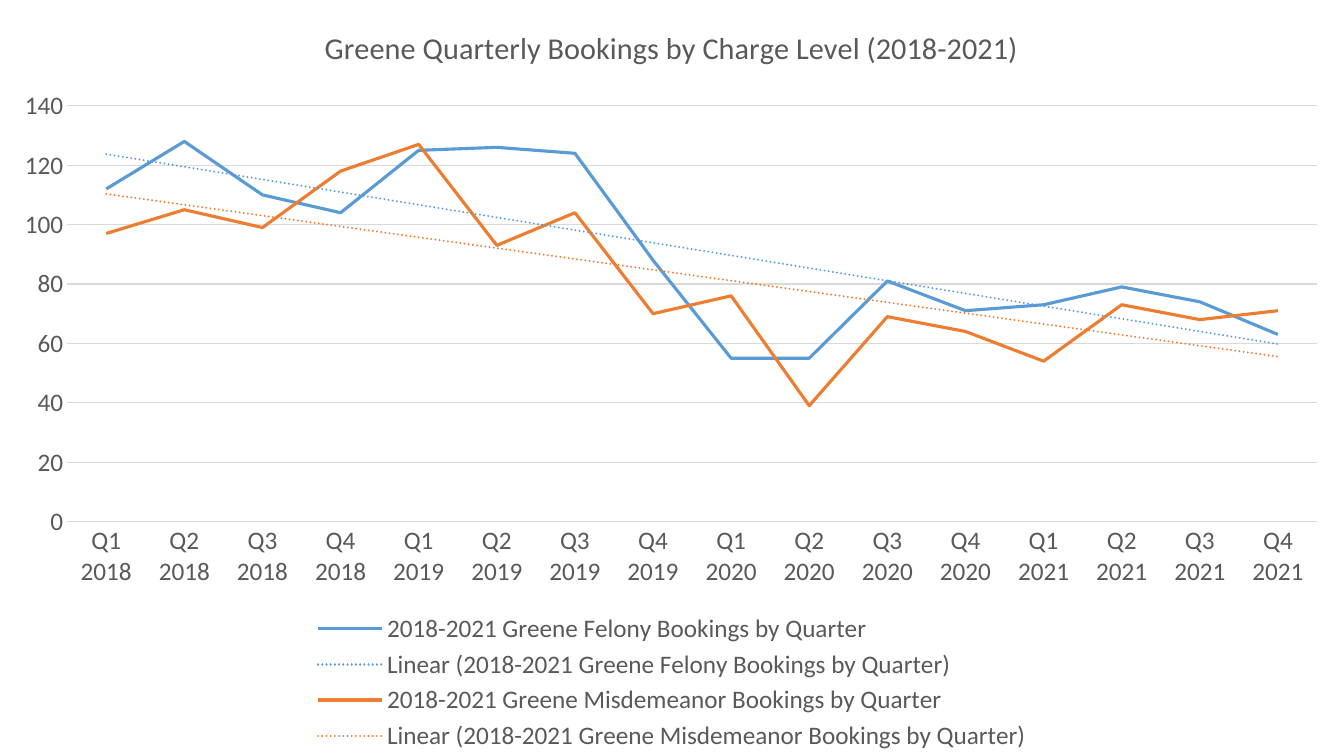
from lxml import etree
from pptx import Presentation
from pptx.chart.data import CategoryChartData
from pptx.dml.color import RGBColor
from pptx.enum.chart import XL_CHART_TYPE as ChartType, XL_LEGEND_POSITION as LegendPos, XL_TICK_MARK as Tick
from pptx.oxml import parse_xml
from pptx.oxml.ns import nsdecls, qn
from pptx.util import Cm, Pt

COLOURS = {"text": "595959", "grid": "D9D9D9", "felony": "5B9BD5", "misdemeanor": "ED7D31"}
TITLE = "Greene Quarterly Bookings by Charge Level (2018-2021)"
QUARTERS = [f"Q{quarter} {year}" for year in range(2018, 2022) for quarter in range(1, 5)]
BOOKINGS = {
    "felony": (112, 128, 110, 104, 125, 126, 124, 88, 55, 55, 81, 71, 73, 79, 74, 63),
    "misdemeanor": (97, 105, 99, 118, 127, 93, 104, 70, 76, 39, 69, 64, 54, 73, 68, 71),
}
PLOT_AREA = {"x": 0.05, "y": 0.14, "w": 0.93, "h": 0.55}
WIDTH, HEIGHT = Cm(33.87), Cm(19.05)


def apply(target, **values):
    """Set each given attribute on the target."""
    for attribute, value in values.items():
        setattr(target, attribute, value)


def style_font(font, size):
    """Give a font the chart's typeface and text colour."""
    apply(font, name="Calibri", size=Pt(size), bold=False)
    font.color.rgb = RGBColor.from_string(COLOURS["text"])


def style_line(line, colour, width):
    """Give a line its colour and its width in points."""
    line.color.rgb = RGBColor.from_string(COLOURS[colour])
    line.width = Pt(width)


def add_trend(series, colour):
    """Add a dotted linear trend line to a series."""
    trend = parse_xml(
        f'<c:trendline {nsdecls("c", "a")}><c:spPr><a:ln w="{Pt(1.5)}" cap="rnd"><a:solidFill>'
        f'<a:srgbClr val="{COLOURS[colour]}"/></a:solidFill><a:prstDash val="sysDot"/></a:ln></c:spPr>'
        '<c:trendlineType val="linear"/><c:dispRSqr val="0"/><c:dispEq val="0"/></c:trendline>')
    series._element.find(qn("c:cat")).addprevious(trend)


def place_plot(chart):
    """Fix the inner plot area as fractions of the chart."""
    plot_area = chart._chartSpace.chart.plotArea
    for automatic in plot_area.findall(qn("c:layout")):
        plot_area.remove(automatic)
    layout = etree.Element(qn("c:layout"))
    manual = etree.SubElement(layout, qn("c:manualLayout"))
    settings = {"layoutTarget": "inner", "xMode": "edge", "yMode": "edge", **PLOT_AREA}
    for tag, value in settings.items():
        etree.SubElement(manual, qn(f"c:{tag}")).set("val", str(value))
    plot_area.insert(0, layout)


def style_axes(chart):
    """Format the quarter axis, the count axis and the gridlines."""
    quarters, counts = chart.category_axis, chart.value_axis
    for axis in (quarters, counts):
        apply(axis, major_tick_mark=Tick.NONE, minor_tick_mark=Tick.NONE)
        style_font(axis.tick_labels.font, 18)
    apply(counts, minimum_scale=0, maximum_scale=140, major_unit=20)
    counts.format.line.fill.background()
    for line in (quarters.format.line, counts.major_gridlines.format.line):
        style_line(line, "grid", 0.75)


def add_bookings_chart(slide, left, top, width, height):
    """Draw quarterly bookings with their trends in the given box."""
    bookings = CategoryChartData(number_format="General")
    bookings.categories = QUARTERS
    for level, counts in BOOKINGS.items():
        bookings.add_series(f"2018-2021 Greene {level.title()} Bookings by Quarter", counts)
    chart = slide.shapes.add_chart(ChartType.LINE, left, top, width, height, bookings).chart
    style_font(chart.font, 18)
    apply(chart, has_title=True, has_legend=True)
    chart.chart_title.text_frame.text = TITLE
    style_font(chart.chart_title.text_frame.paragraphs[0].runs[0].font, 21.6)
    apply(chart.legend, position=LegendPos.BOTTOM, include_in_layout=False)
    style_font(chart.legend.font, 18)
    chart.plots[0].vary_by_categories = False
    for level, series in zip(BOOKINGS, chart.plots[0].series):
        series.smooth = False
        style_line(series.format.line, level, 2.25)
        add_trend(series, level)
    style_axes(chart)
    place_plot(chart)


def main():
    """Build the one-slide presentation."""
    deck = Presentation()
    apply(deck, slide_width=WIDTH, slide_height=HEIGHT)
    slide = deck.slides.add_slide(deck.slide_layouts[6])
    add_bookings_chart(slide, 0, 0, WIDTH, HEIGHT)
    deck.save("out.pptx")


if __name__ == "__main__":
    main()
